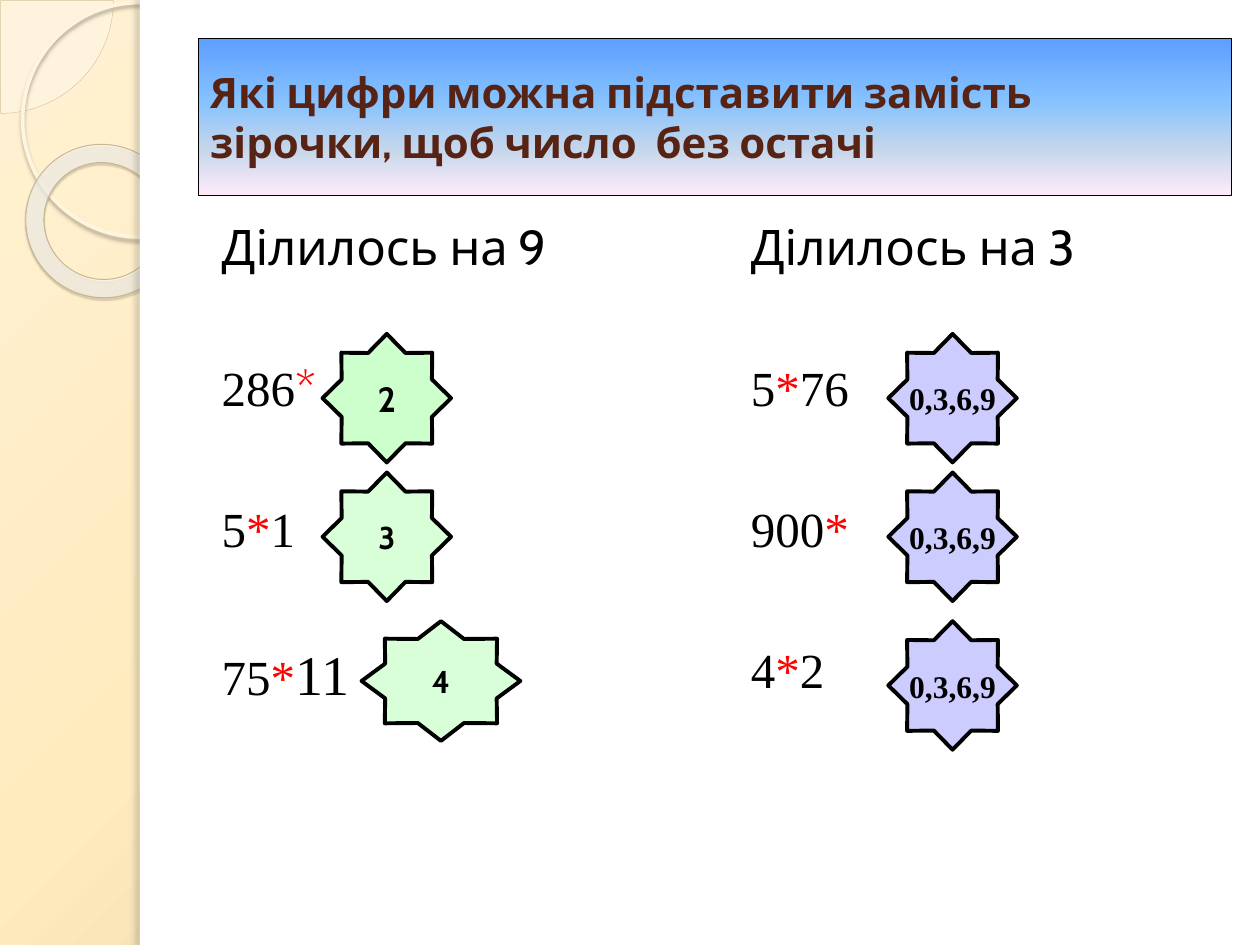
import pptx
import pptx.util
import pptx.dml.color
import pptx.enum.dml
import pptx.enum.shapes
import pptx.enum.text
import pptx.oxml
import pptx.oxml.ns

Inches, Pt = pptx.util.Inches, pptx.util.Pt
SHAPE = pptx.enum.shapes.MSO_SHAPE
ANCHOR = pptx.enum.text.MSO_ANCHOR
ALIGN = pptx.enum.text.PP_ALIGN

THEME = {
    "sans": "Cabin", "serif": "Times New Roman",
    "title": "572314", "text": "000000", "wildcard": "FF0000", "paper": "FFFFFF",
    "green": "CCFFCC", "mint": "D9FFD9", "lilac": "CCCCFF",
    "title_size": 24, "body_size": 28, "large_size": 32, "answer_size": 18, "first_size": 20,
}
# Gradient stops: position %, colour, opacity %
BACKGROUND = [(0, "FFF1D3", 100), (40, "FFEBBE", 100), (100, "C9B484", 100)]
BANNER = [(0, "5E9EFF", 100), (40, "85C2FF", 100), (70, "C4D6EB", 100), (100, "FFEBFA", 100)]
RING = [(0, "FFFCF6", 70), (70, "FFFEFB", 55), (100, "F0D28E", 60)]

TITLE = "Які цифри можна підставити замість зірочки, щоб число  без остачі"
# Left edge, heading, puzzles as (before star, after star, size of the last part)
COLUMNS = [
    (1.57, "Ділилось на 9", [("286", "", "body_size"), ("5", "1", "body_size"),
                             ("75", "11", "large_size")]),
    (5.77, "Ділилось на 3", [("5", "76", "body_size"), ("900", "", "body_size"),
                             ("4", "2", "body_size")]),
]
ROW_TOPS = [2.65, 3.75, 4.93]
STAR = 1.02
# Left, width, height, answer, fill, font, size; one per row
GREEN_STARS = [
    (2.56, STAR, STAR, "2", "green", "sans", "first_size"),
    (2.56, STAR, STAR, "3", "mint", "sans", "answer_size"),
    (2.87, 1.26, 0.95, "4", "mint", "sans", "answer_size"),
]
LILAC_STARS = [(7.05, STAR, STAR, "0,3,6,9", "lilac", "serif", "answer_size")] * 3


def rgb(value):
    return pptx.dml.color.RGBColor.from_string(value)


def color_xml(color, opacity):
    return f'<a:srgbClr val="{color}"><a:alpha val="{opacity * 1000}"/></a:srgbClr>'


def set_gradient(fill, element, stops, focus=None):
    """Fill with stops, top to bottom or, given a focus rectangle in %, radially."""
    fill.gradient()
    stop_xml = "".join(f'<a:gs pos="{pos * 1000}">{color_xml(color, opacity)}</a:gs>'
                       for pos, color, opacity in stops)
    if focus:
        sides = " ".join(f'{side}="{value * 1000}"' for side, value in zip("ltrb", focus))
        way = f'<a:path path="circle"><a:fillToRect {sides}/></a:path>'
    else:
        way = '<a:lin ang="5400000" scaled="0"/>'
    old = element.xpath(".//a:gradFill")[0]
    new = pptx.oxml.parse_xml(f'<a:gradFill {pptx.oxml.ns.nsdecls("a")} rotWithShape="1">'
                              f'<a:gsLst>{stop_xml}</a:gsLst>{way}</a:gradFill>')
    old.getparent().replace(old, new)


def set_alpha(sp, opacity):
    color = sp.element.xpath("./p:spPr/a:solidFill/a:srgbClr")[0]
    color.append(pptx.oxml.parse_xml(
        f'<a:alpha {pptx.oxml.ns.nsdecls("a")} val="{opacity * 1000}"/>'))


def set_shadow(sp, color, opacity, blur, distance, angle):
    effects = sp.element.xpath("./p:spPr/a:effectLst")[0]
    effects.append(pptx.oxml.parse_xml(
        f'<a:outerShdw {pptx.oxml.ns.nsdecls("a")} blurRad="{Pt(blur)}" dist="{Pt(distance)}" '
        f'dir="{angle * 60000}" algn="tl" rotWithShape="0">{color_xml(color, opacity)}'
        '</a:outerShdw>'))


def add_shape(slide, kind, box, fill=None, line=None, width=0.25):
    sp = slide.shapes.add_shape(kind, *map(Inches, box))
    sp.shadow.inherit = False
    if fill:
        sp.fill.solid()
        sp.fill.fore_color.rgb = rgb(fill)
    else:
        sp.fill.background()
    if line:
        sp.line.color.rgb = rgb(line)
        sp.line.width = Pt(width)
    else:
        sp.line.fill.background()
    return sp


def style_font(font, name, size, color, bold=False):
    font.name, font.size, font.bold = THEME[name], Pt(THEME[size]), bold
    font.color.rgb = rgb(THEME[color])


def add_decoration(slide):
    pie = add_shape(slide, SHAPE.PIE, (-0.89, -0.89, 1.79, 1.79), "FEFAF4", "D3C39F")
    pie.adjustments[0], pie.adjustments[1] = 0, 54
    set_alpha(pie, 33)
    circle = add_shape(slide, SHAPE.OVAL, (0.18, 0.02, 1.86, 1.86), line="FFF5DE", width=2.15)
    set_shadow(circle, "B0A68F", 85, 2, 2, 90)
    ring = add_shape(slide, SHAPE.DONUT, (0.2, 1.15, 1.23, 1.21), line="C7B893", width=0.58)
    ring.rotation = 38.6
    ring.adjustments[0] = 0.12
    set_gradient(ring.fill, ring.element, RING, (-408, -50, 508, 150))
    set_shadow(ring, "5A5444", 35, 1, 1.2, 75)
    add_shape(slide, SHAPE.RECTANGLE, (1.11, 0, 8.89, 7.5), THEME["paper"])
    edge = add_shape(slide, SHAPE.RECTANGLE, (1.11, 0, 0.08, 7.5), THEME["paper"])
    set_shadow(edge, "736F63", 25, 3, 3, 180)


def add_title(slide):
    sp = add_shape(slide, SHAPE.RECTANGLE, (1.57, 0.3, 8.2, 1.25), line=THEME["text"])
    sp.line.dash_style = pptx.enum.dml.MSO_LINE.ROUND_DOT
    set_gradient(sp.fill, sp.element, BANNER)
    tf = sp.text_frame
    tf.word_wrap, tf.vertical_anchor = True, ANCHOR.MIDDLE
    tf.margin_right = Inches(0.2)
    p = tf.paragraphs[0]
    p.text, p.alignment = TITLE, ALIGN.LEFT
    style_font(p.font, "sans", "title_size", "title", True)


def add_column(slide, left, heading, puzzles):
    tf = slide.shapes.add_textbox(*map(Inches, (left, 1.67, 4, 5.1))).text_frame
    tf.word_wrap = True
    tf.margin_left = Inches(0.19)
    p = tf.paragraphs[0]
    p.text, p.space_before = heading, Pt(6)
    style_font(p.font, "sans", "body_size", "text")
    for before, after, last_size in puzzles:
        p = tf.add_paragraph()
        p.space_before = Pt(47)
        star_font = "sans" if before == "286" else "serif"
        for text, font, size, color in ((before, "serif", "body_size", "text"),
                                        ("*", star_font, "body_size", "wildcard"),
                                        (after, "serif", last_size, "text")):
            if text:
                r = p.add_run()
                r.text = text
                style_font(r.font, font, size, color)


def add_star(slide, top, left, width, height, answer, fill, font, size):
    sp = add_shape(slide, SHAPE.STAR_8_POINT, (left, top, width, height),
                   THEME[fill], THEME["text"], 2.25)
    sp.adjustments[0] = 0.38
    tf = sp.text_frame
    tf.word_wrap, tf.vertical_anchor = False, ANCHOR.MIDDLE
    p = tf.paragraphs[0]
    p.text, p.alignment = answer, ALIGN.CENTER
    style_font(p.font, font, size, "text", True)


def main():
    prs = pptx.Presentation()
    prs.slide_width, prs.slide_height = Inches(10), Inches(7.5)
    slide = prs.slides.add_slide(prs.slide_layouts[6])
    set_gradient(slide.background.fill, slide.element, BACKGROUND, (-24, -20, 124, 120))
    add_decoration(slide)
    add_title(slide)
    for column in COLUMNS:
        add_column(slide, *column)
    for stars in (GREEN_STARS, LILAC_STARS):
        for top, star in zip(ROW_TOPS, stars):
            add_star(slide, top, *star)
    prs.save("out.pptx")


if __name__ == "__main__":
    main()
